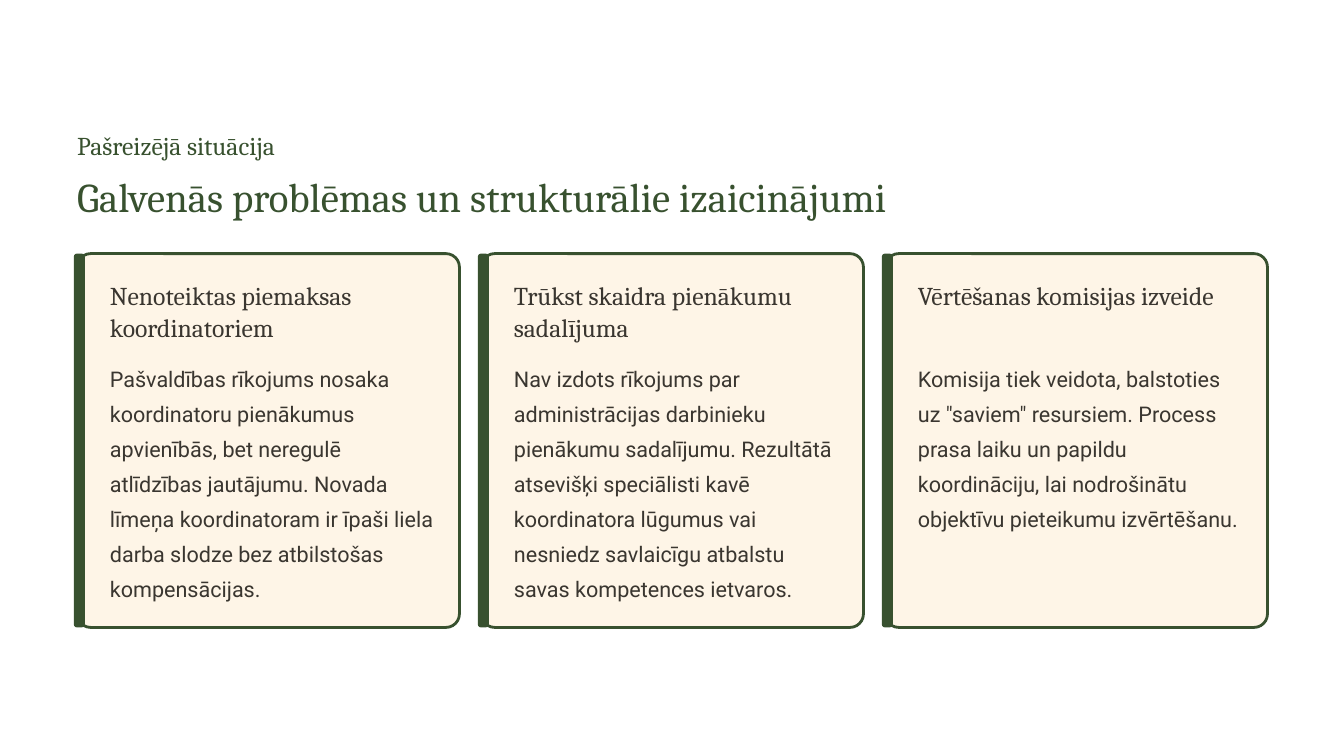
from pptx import Presentation
from pptx.dml.color import RGBColor
from pptx.enum.shapes import MSO_SHAPE
from pptx.util import Pt

GREEN, CREAM, INK = "38512F", "FEF5E7", "3A3630"
SERIF, SANS = "Cambria", "Roboto"


def color(code):
    return RGBColor.from_string(code)


class Deck:
    """Holds the style and the current slide."""

    def __init__(self, width, height):
        self.prs = Presentation()
        self.prs.slide_width, self.prs.slide_height = Pt(width), Pt(height)
        self.slide = self.prs.slides.add_slide(self.prs.slide_layouts[6])

    def text(self, box, words, font, size, lead, ink, wrap=True):
        frame = self.slide.shapes.add_textbox(*map(Pt, box)).text_frame
        frame.margin_left = frame.margin_right = 0
        frame.margin_top = frame.margin_bottom = 0
        frame.word_wrap = wrap
        para = frame.paragraphs[0]
        para.text = words
        para.line_spacing = Pt(lead)
        para.font.name, para.font.size = font, Pt(size)
        para.font.color.rgb = color(ink)

    def panel(self, box, round_by, fill, line=None):
        shape = self.slide.shapes.add_shape(
            MSO_SHAPE.ROUNDED_RECTANGLE, *map(Pt, box))
        shape.adjustments[0] = round_by
        shape.shadow.inherit = False
        shape.fill.solid()
        shape.fill.fore_color.rgb = color(fill)
        if line:
            shape.line.color.rgb = color(line)
            shape.line.width = Pt(2.4)
        else:
            shape.line.fill.background()

    def card(self, left, top, head, body):
        high = 320.4
        self.panel((left, top, 327.6, high), 0.036, CREAM, GREEN)
        self.panel((left - 2.9, top, 9.4, high), 0.295, GREEN)
        self.text((left + 28, top + 21.6, 278, 55.4), head, SERIF, 22, 27.5, INK)
        self.text((left + 28, top + 88.6, 278, 211), body, SANS, 18.5, 30, INK)


CARDS = [
    ("Nenoteiktas piemaksas koordinatoriem",
     "Pašvaldības rīkojums nosaka koordinatoru pienākumus apvienībās, bet "
     "neregulē atlīdzības jautājumu. Novada līmeņa koordinatoram ir īpaši "
     "liela darba slodze bez atbilstošas kompensācijas."),
    ("Trūkst skaidra pienākumu sadalījuma",
     "Nav izdots rīkojums par administrācijas darbinieku pienākumu "
     "sadalījumu. Rezultātā atsevišķi speciālisti kavē koordinatora lūgumus "
     "vai nesniedz savlaicīgu atbalstu savas kompetences ietvaros."),
    ("Vērtēšanas komisijas izveide",
     'Komisija tiek veidota, balstoties uz "saviem" resursiem. Process prasa '
     "laiku un papildu koordināciju, lai nodrošinātu objektīvu pieteikumu "
     "izvērtēšanu."),
]


def main():
    deck = Deck(1152, 648)
    left, pitch = 66.2, 346.3

    # Headings
    deck.text((left, 110.2, 222, 27.4), "Pašreizējā situācija",
              SERIF, 22, 27.5, GREEN, wrap=False)
    deck.text((left, 145.4, 791, 44.6),
              "Galvenās problēmas un strukturālie izaicinājumi",
              SERIF, 35, 44, GREEN, wrap=False)

    # Row of cards
    for i, (head, body) in enumerate(CARDS):
        deck.card(left + i * pitch, 217.4, head, body)

    deck.prs.save("out.pptx")


if __name__ == "__main__":
    main()
